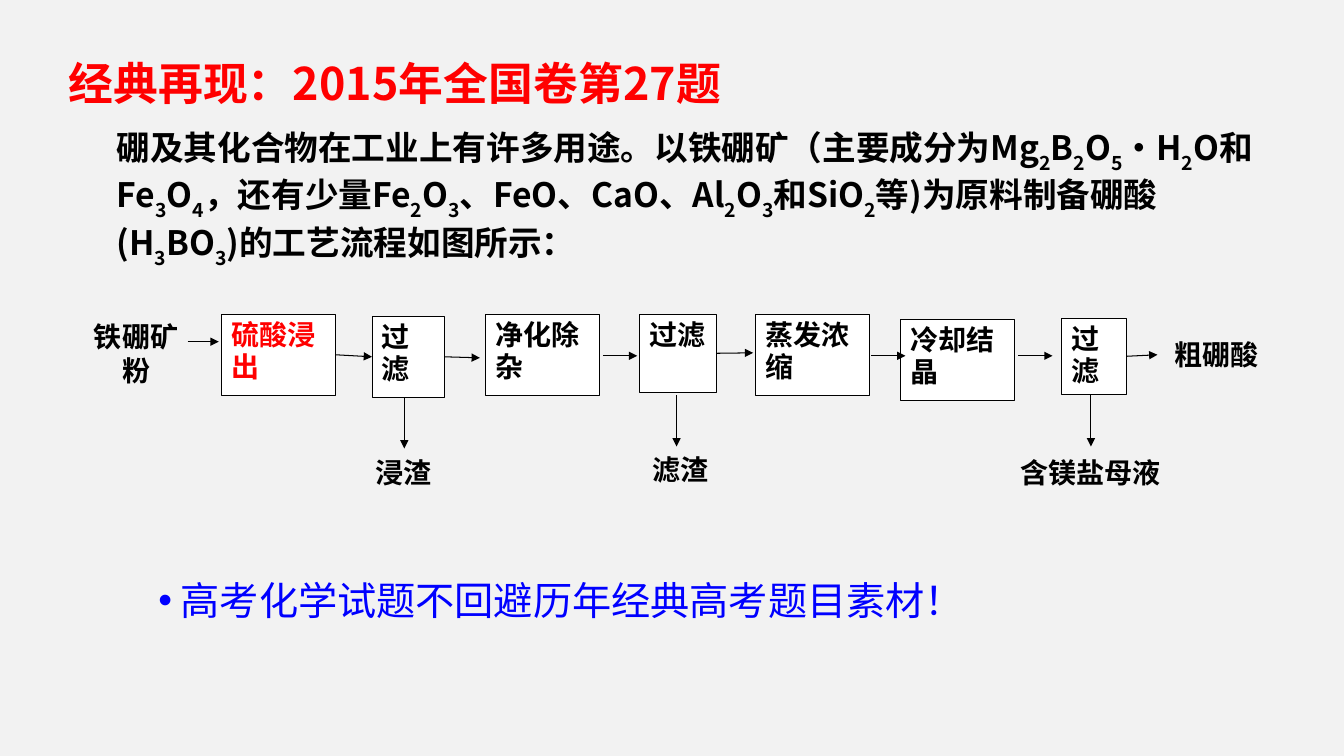
from dataclasses import dataclass
from itertools import groupby
from typing import Optional

import pptx
import pptx.dml.color
import pptx.enum.shapes
import pptx.enum.text
import pptx.oxml.ns
import pptx.util
from lxml import etree

CELL = 0.1
NOTO = "Noto Sans CJK SC"
BODY = "Calibri"
ALIGN = pptx.enum.text.PP_ALIGN
ANCHOR = pptx.enum.text.MSO_ANCHOR


@dataclass
class Area:
    """A block on the grid, in columns and rows."""
    col: float
    row: float
    wide: float
    high: float


@dataclass
class Step:
    """A boxed stage of the process."""
    text: str
    area: Area
    color: str = "000000"


@dataclass
class Label:
    """An unboxed material name."""
    text: str
    area: Area


@dataclass
class Arrow:
    """An arrow, with the steps it joins."""
    col: float
    row: float
    right: float = 0
    down: float = 0
    start: Optional[int] = None
    end: Optional[int] = None


STEPS = [
    Step("硫酸浸出", Area(22, 31.2, 11.3, 8), "FF0000"),
    Step("过滤", Area(36.9, 31.4, 7.2, 8)),
    Step("净化除杂", Area(48.2, 31.2, 11.3, 8)),
    Step("过滤", Area(63.4, 31.2, 7.7, 7.7)),
    Step("蒸发浓缩", Area(74.9, 31.2, 11.3, 8)),
    Step("冷却结晶", Area(89.3, 31.7, 11.3, 8)),
    Step("过滤", Area(105.3, 31.6, 6.4, 7.5)),
]
LABELS = [
    Label("铁硼矿粉", Area(8, 31.7, 11, 5.9)),
    Label("粗硼酸", Area(115.2, 33.5, 11, 5.9)),
    Label("浸渣", Area(35.3, 45.2, 9.4, 6.2)),
    Label("滤渣", Area(62.4, 44.9, 10.1, 6.4)),
    Label("含镁盐母液", Area(95.3, 45.2, 25.8, 4)),
]
ARROWS = [
    Arrow(18.6, 33.9, right=3.1),
    Arrow(33.3, 35.3, right=3.5, start=0, end=1),
    Arrow(44.2, 35.5, right=3.4, start=1),
    Arrow(59.8, 35.3, right=3.4),
    Arrow(71.2, 35, right=3.5, start=3),
    Arrow(86.4, 35.3, right=3.4),
    Arrow(101, 35.3, right=3.4),
    Arrow(111.7, 35.2, right=3.1, start=6),
    Arrow(40.1, 39.4, down=5.1),
    Arrow(67.1, 39.2, down=5.1),
    Arrow(108.2, 39.2, down=5.1),
]
STORY = ("硼及其化合物在工业上有许多用途。以铁硼矿（主要成分为Mg2B2O5·H2O和Fe3O4，"
         "还有少量Fe2O3、FeO、CaO、Al2O3和SiO2等)为原料制备硼酸(H3BO3)的工艺流程如图所示：")


def cells(count: float) -> int:
    """Turn a count of grid cells into a length."""
    return pptx.util.Inches(round(count * CELL, 2))


def place(area: Area) -> tuple:
    """Give left, top, width and height of an area."""
    return tuple(map(cells, (area.col, area.row, area.wide, area.high)))


def tint(code: str) -> pptx.dml.color.RGBColor:
    """Turn a hex string into a colour."""
    return pptx.dml.color.RGBColor.from_string(code)


def style(part, size: float, face: str, color: str, bold: bool = True) -> None:
    """Format every run of a paragraph."""
    for run in part.runs:
        font = run.font
        font.size, font.name, font.bold = pptx.util.Pt(size), face, bold
        font.color.rgb = tint(color)
        east = etree.SubElement(run._r.get_or_add_rPr(), pptx.oxml.ns.qn("a:ea"))
        east.set("typeface", face)


def setup(shape, anchor, align, inset: bool = True):
    """Prepare the frame of a shape and return its first paragraph."""
    frame = shape.text_frame
    frame.word_wrap = True
    frame.auto_size = pptx.enum.text.MSO_AUTO_SIZE.NONE
    frame.vertical_anchor = anchor
    if not inset:
        frame.margin_left = frame.margin_right = 0
        frame.margin_top = frame.margin_bottom = 0
    part = frame.paragraphs[0]
    part.alignment = align
    return part


def fit(shape, area: Area) -> None:
    """Move a placeholder to an area."""
    shape.left, shape.top, shape.width, shape.height = place(area)


def add_step(slide, step: Step):
    """Draw a boxed stage."""
    kind = pptx.enum.shapes.MSO_SHAPE.RECTANGLE
    shape = slide.shapes.add_shape(kind, *place(step.area))
    shape.shadow.inherit = False
    shape.fill.solid()
    shape.fill.fore_color.rgb = tint("FFFFFF")
    shape.line.color.rgb = tint("000000")
    shape.line.width = pptx.util.Pt(0.75)
    part = setup(shape, ANCHOR.TOP, ALIGN.LEFT)
    part.text = step.text
    part.line_spacing = 0.96
    style(part, 20, BODY, step.color)
    return shape


def add_label(slide, label: Label) -> None:
    """Write a material name."""
    shape = slide.shapes.add_textbox(*place(label.area))
    part = setup(shape, ANCHOR.TOP, ALIGN.CENTER, inset=False)
    part.text = label.text
    style(part, 20, BODY, "000000")


def add_arrow(slide, arrow: Arrow, steps: list) -> None:
    """Draw an arrow and join it to its steps."""
    kind = pptx.enum.shapes.MSO_CONNECTOR.STRAIGHT
    ends = (arrow.col, arrow.row, arrow.col + arrow.right, arrow.row + arrow.down)
    line = slide.shapes.add_connector(kind, *map(cells, ends))
    if arrow.start is not None:
        line.begin_connect(steps[arrow.start], 3)
    if arrow.end is not None:
        line.end_connect(steps[arrow.end], 1)
    line.line.color.rgb = tint("000000")
    line.line.width = pptx.util.Pt(0.75)
    tail = etree.SubElement(line.line._get_or_add_ln(), pptx.oxml.ns.qn("a:tailEnd"))
    tail.set("type", "triangle")
    etree.SubElement(line._element.spPr, pptx.oxml.ns.qn("a:effectLst"))


def add_story(slide) -> None:
    """Write the question with lowered digits."""
    shape = slide.shapes.add_textbox(*place(Area(10.6, 13.1, 115.6, 13.1)))
    part = setup(shape, ANCHOR.MIDDLE, ALIGN.LEFT)
    for low, chars in groupby(STORY, str.isdigit):
        run = part.add_run()
        run.text = "".join(chars)
        if low:
            run._r.get_or_add_rPr().set("baseline", "-30000")
    style(part, 24, NOTO, "000000")


def add_heads(slide) -> None:
    """Fill the title and the closing list."""
    title, note = slide.shapes.title, slide.placeholders[1]
    fit(title, Area(5.8, 2.3, 104, 9.1))
    part = setup(title, ANCHOR.MIDDLE, ALIGN.LEFT)
    part.text = "经典再现：2015年全国卷第27题"
    part.line_spacing = 1.5
    style(part, 32, NOTO, "FF0000")
    fit(note, Area(14.7, 56.7, 116.6, 5.7))
    part = setup(note, ANCHOR.MIDDLE, ALIGN.LEFT)
    part.text = " 高考化学试题不回避历年经典高考题目素材！"
    part.space_before = pptx.util.Pt(0)
    style(part, 28, NOTO, "0000FF", bold=False)
    props = part._p.get_or_add_pPr()
    props.set("marL", "0")
    props.set("indent", "0")
    etree.SubElement(props, pptx.oxml.ns.qn("a:buChar")).set("char", "•")


def main() -> None:
    """Build and save the slide."""
    deck = pptx.Presentation()
    deck.slide_width, deck.slide_height = cells(133.3), cells(75)
    slide = deck.slides.add_slide(deck.slide_layouts[1])
    slide.background.fill.solid()
    slide.background.fill.fore_color.rgb = tint("F2F2F2")
    add_heads(slide)
    steps = [add_step(slide, step) for step in STEPS]
    for arrow in ARROWS:
        add_arrow(slide, arrow, steps)
    for label in LABELS:
        add_label(slide, label)
    add_story(slide)
    deck.save("out.pptx")


if __name__ == "__main__":
    main()
